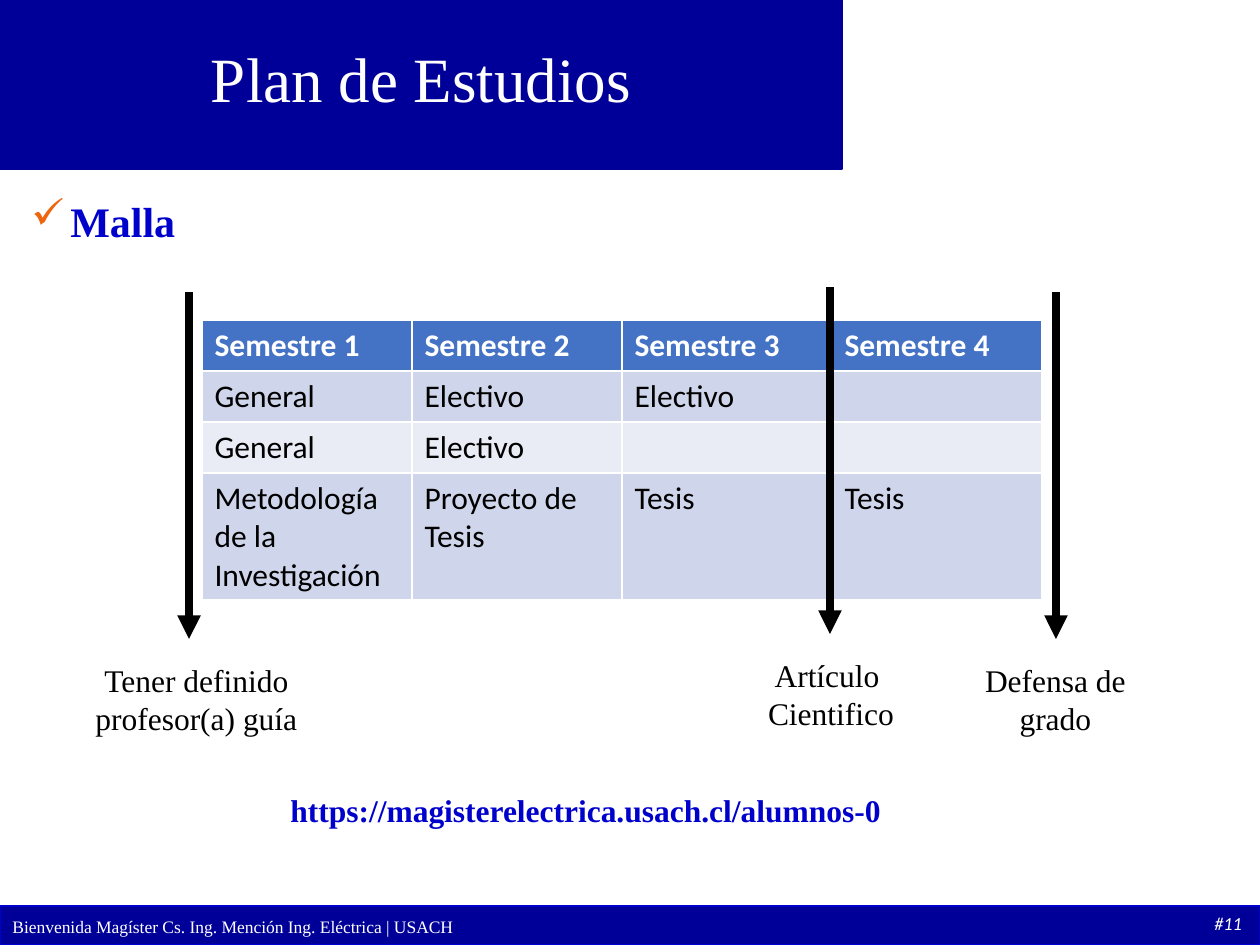
from lxml.etree import SubElement
from pptx import Presentation
from pptx.dml.color import RGBColor
from pptx.enum.shapes import MSO_CONNECTOR as Connector, MSO_SHAPE as Shape
from pptx.enum.text import MSO_ANCHOR as Anchor, PP_ALIGN as Align
from pptx.oxml.ns import qn
from pptx.util import Emu, Pt

SERIF, SANS = "Times New Roman", "Calibri"
NAVY, BLUE, ORANGE, WHITE, BLACK = "000099", "0000CC", "EE6510", "FFFFFF", "000000"
HEADER_FILL, BAND_FILLS = "4472C4", ("CFD5EA", "E9EBF5")

BARS = [((0, 0, 842, 169), NAVY), ((0, 906, 1260, 39), BLUE)]
TEXTS = [
    ("Bienvenida Magíster Cs. Ing. Mención Ing. Eléctrica | USACH",
     (0, 910, 1163, 34), dict(size=10, color=WHITE)),
    ("#11", (1202, 906, 58, 35), dict(size=10.5, color=WHITE, font=SANS, italic=True)),
    ("Plan de Estudios", (0, 0, 842, 165),
     dict(size=36, color=WHITE, align=Align.CENTER, anchor=Anchor.MIDDLE, spacing=0.9)),
    ("Malla", (19, 189, 1200, 63),
     dict(size=24, color=BLUE, bold=True, align=Align.JUSTIFY, bullet="✓")),
    ("https://magisterelectrica.usach.cl/alumnos-0", (278, 785, 759, 50),
     dict(color=BLUE, bold=True)),
]
SEMESTERS = [
    ("Semestre 1", "Semestre 2", "Semestre 3", "Semestre 4"),
    ("General", "Electivo", "Electivo", ""),
    ("General", "Electivo", "", ""),
    ("Metodología de la Investigación", "Proyecto de Tesis", "Tesis", "Tesis"),
]
TABLE_LEFT, TABLE_TOP, COLUMN_WIDTH = 202, 320, 210
ROW_HEIGHTS = (51, 51, 51, 127)
ARROW_LENGTH = 347
MILESTONES = [
    (189, 292, "Tener definido profesor(a) guía ", (82, 655, 229, 127)),
    (1056, 292, "Defensa de grado", (948, 655, 215, 89)),
    (830, 287, "Artículo \nCientifico", (683, 650, 296, 89)),
]


def px(value):
    return Emu(round(value * 914400 / 126))


def rgb(value):
    return RGBColor.from_string(value)


def add_bullet(paragraph, character):
    properties = paragraph._p.get_or_add_pPr()
    properties.set("marL", str(px(39)))
    properties.set("indent", str(px(-39)))
    color = SubElement(properties, qn("a:buClr"))
    SubElement(color, qn("a:srgbClr"), val=ORANGE)
    SubElement(properties, qn("a:buChar"), char=character)


def write(frame, text, size=18, color=BLACK, font=SERIF, bold=False, italic=False,
          align=Align.LEFT, anchor=Anchor.TOP, spacing=None, bullet=None):
    frame.word_wrap = True
    frame.vertical_anchor = anchor
    frame.text = text
    for paragraph in frame.paragraphs:
        paragraph.alignment = align
        if spacing:
            paragraph.line_spacing = spacing
        if bullet:
            add_bullet(paragraph, bullet)
        style = paragraph.font
        style.size, style.name = Pt(size), font
        style.bold, style.italic = bold, italic
        style.color.rgb = rgb(color)


def add_text(slide, text, box, **form):
    write(slide.shapes.add_textbox(*map(px, box)).text_frame, text, **form)


def add_bar(slide, box, line_color):
    bar = slide.shapes.add_shape(Shape.RECTANGLE, *map(px, box))
    bar.shadow.inherit = False
    bar.fill.solid()
    bar.fill.fore_color.rgb = rgb(NAVY)
    bar.line.color.rgb = rgb(line_color)
    bar.line.width = Pt(1)


def add_arrow(slide, x, top):
    ends = map(px, (x, top, x, top + ARROW_LENGTH))
    arrow = slide.shapes.add_connector(Connector.STRAIGHT, *ends)
    arrow.line.color.rgb = rgb(BLACK)
    arrow.line.width = Pt(4.5)
    SubElement(arrow.line._get_or_add_ln(), qn("a:tailEnd"), type="triangle")
    SubElement(arrow._element.spPr, qn("a:effectLst"))


def add_semesters(slide):
    columns = len(SEMESTERS[0])
    box = (TABLE_LEFT, TABLE_TOP, COLUMN_WIDTH * columns, sum(ROW_HEIGHTS))
    table = slide.shapes.add_table(len(SEMESTERS), columns, *map(px, box)).table
    for column in table.columns:
        column.width = px(COLUMN_WIDTH)
    for index, (height, texts) in enumerate(zip(ROW_HEIGHTS, SEMESTERS)):
        table.rows[index].height = px(height)
        header = index == 0
        for cell, text in zip(table.rows[index].cells, texts):
            cell.fill.solid()
            cell.fill.fore_color.rgb = rgb(HEADER_FILL if header else BAND_FILLS[(index - 1) % 2])
            write(cell.text_frame, text, font=SANS, bold=header,
                  color=WHITE if header else BLACK)


def main():
    presentation = Presentation()
    presentation.slide_width, presentation.slide_height = px(1260), px(945)
    slide = presentation.slides.add_slide(presentation.slide_layouts[6])
    for box, line_color in BARS:
        add_bar(slide, box, line_color)
    for text, box, form in TEXTS:
        add_text(slide, text, box, **form)
    add_semesters(slide)
    for x, top, text, box in MILESTONES:
        add_arrow(slide, x, top)
        add_text(slide, text, box, align=Align.CENTER)
    presentation.save("out.pptx")


if __name__ == "__main__":
    main()
